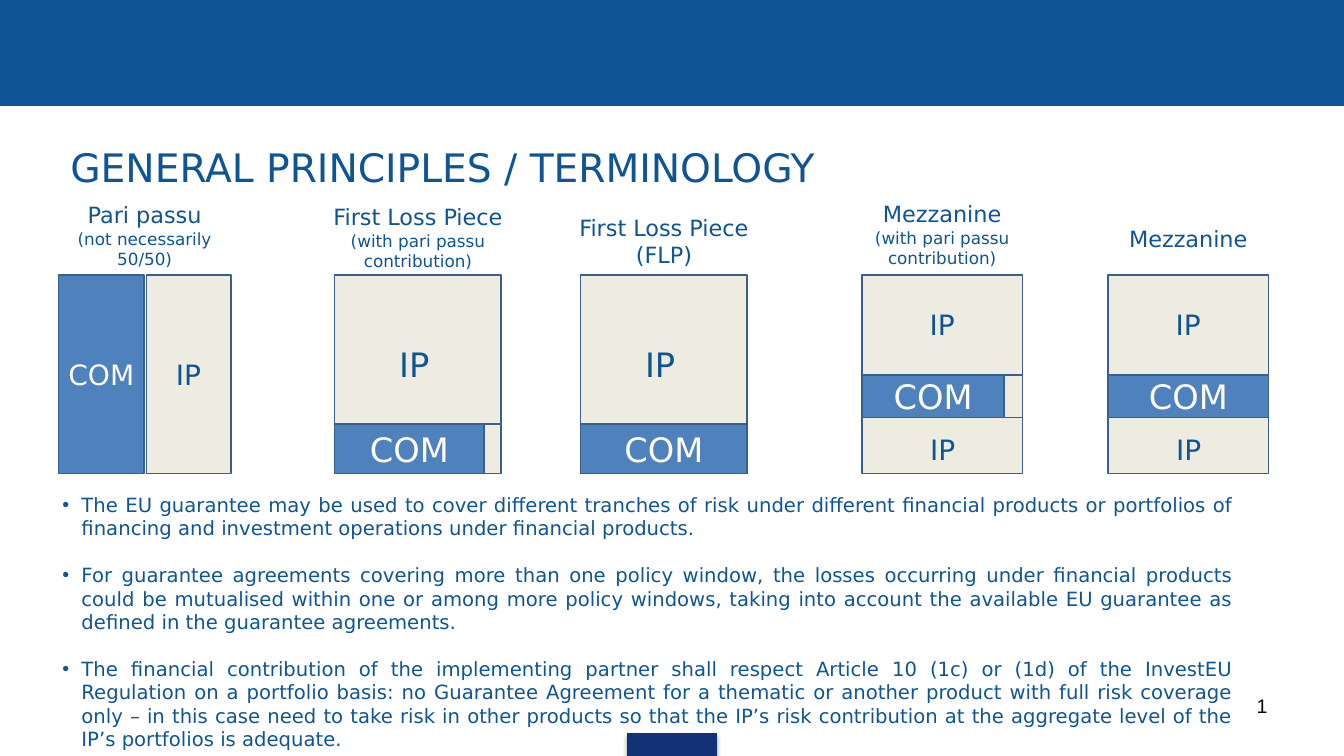
from dataclasses import dataclass

from lxml import etree
from pptx import Presentation
from pptx.dml.color import RGBColor
from pptx.enum.shapes import MSO_SHAPE
from pptx.enum.text import MSO_ANCHOR, PP_ALIGN
from pptx.oxml import parse_xml
from pptx.oxml.ns import nsdecls, qn
from pptx.util import Inches, Pt

BLUE = RGBColor(0x0F, 0x54, 0x94)
NAVY = RGBColor(0x13, 0x31, 0x76)
COM_BLUE = RGBColor(0x4F, 0x81, 0xBD)
IP_BEIGE = RGBColor(0xEE, 0xEC, 0xE1)
OUTLINE = RGBColor(0x3A, 0x5F, 0x8C)
WHITE = RGBColor(0xFF, 0xFF, 0xFF)
BLACK = RGBColor(0, 0, 0)
FONT = "DejaVu Sans"

BULLETS = [
    "The EU guarantee may be used to cover different tranches of risk under different "
    "financial products or portfolios of financing and investment operations under "
    "financial products.",
    "For guarantee agreements covering more than one policy window, the losses occurring "
    "under financial products could be mutualised within one or among more policy windows, "
    "taking into account the available EU guarantee as defined in the guarantee agreements.",
    "The financial contribution of the implementing partner shall respect Article 10 (1c) or "
    "(1d) of the InvestEU Regulation on a portfolio basis: no Guarantee Agreement for a "
    "thematic or another product with full risk coverage only – in this case need to take "
    "risk in other products so that the IP’s risk contribution at the aggregate level of the "
    "IP’s portfolios is adequate.",
]


@dataclass
class Box:
    left: float
    top: float
    width: float
    height: float

    def area(self, left, top, width, height):
        """Box on a grid of 100 columns by 100 rows laid over this one."""
        return Box(self.left + self.width * left / 100, self.top + self.height * top / 100,
                   self.width * width / 100, self.height * height / 100)

    def lengths(self):
        return [Inches(value) for value in (self.left, self.top, self.width, self.height)]


def format_paragraph(paragraph, text, size, color=BLUE, align=PP_ALIGN.LEFT, font=FONT):
    paragraph.text = text
    paragraph.alignment = align
    for run in paragraph.runs:
        run.font.size = Pt(size)
        run.font.name = font
        run.font.color.rgb = color


def add_text(slide, box, lines, align=PP_ALIGN.LEFT, color=BLUE, font=FONT):
    text_frame = slide.shapes.add_textbox(*box.lengths()).text_frame
    text_frame.word_wrap = True
    for index, (text, size) in enumerate(lines):
        paragraph = text_frame.add_paragraph() if index else text_frame.paragraphs[0]
        format_paragraph(paragraph, text, size, color, align, font)
    return text_frame


def add_block(slide, box, fill, line=OUTLINE, line_width=1, text="", size=24, color=WHITE):
    shape = slide.shapes.add_shape(MSO_SHAPE.RECTANGLE, *box.lengths())
    shape.shadow.inherit = False
    shape.fill.solid()
    shape.fill.fore_color.rgb = fill
    shape.line.color.rgb = line
    shape.line.width = Pt(line_width)
    if text:
        shape.text_frame.word_wrap = False
        shape.text_frame.vertical_anchor = MSO_ANCHOR.MIDDLE
        format_paragraph(shape.text_frame.paragraphs[0], text, size, color, PP_ALIGN.CENTER)
    return shape


def draw_frame(slide, page):
    add_block(slide, page.area(0, 0, 100, 14), BLUE, BLUE, 0.75)
    tab = add_block(slide, page.area(46.67, 97.07, 6.67, 2.93), NAVY, NAVY, 0.75)
    effects = tab._element.spPr.find(qn("a:effectLst"))
    effects.append(parse_xml(
        f'<a:outerShdw {nsdecls("a")} blurRad="{Pt(3.1)}" dist="{Pt(1.8)}" dir="5400000" '
        'rotWithShape="0"><a:srgbClr val="000000"><a:alpha val="35000"/></a:srgbClr>'
        '</a:outerShdw>'))
    add_text(slide, page.area(71.72, 91.07, 23.33, 6.93), [("1", 14)],
             PP_ALIGN.RIGHT, BLACK, "Arial")


def draw_bullets(slide, box):
    text_frame = add_text(slide, box, [(text, 14) for text in BULLETS], PP_ALIGN.JUSTIFY)
    for index, paragraph in enumerate(text_frame.paragraphs):
        if index:
            paragraph.space_before = Pt(16.5)
        properties = paragraph._p.get_or_add_pPr()
        properties.set("marL", str(Inches(0.19)))
        properties.set("indent", str(-Inches(0.19)))
        etree.SubElement(properties, qn("a:buFont")).set("typeface", "Arial")
        etree.SubElement(properties, qn("a:buChar")).set("char", "•")


def draw_pari_passu(slide, box):
    add_block(slide, box.area(50.9, 0, 49.1, 100), IP_BEIGE, text="IP", size=20, color=BLUE)
    add_block(slide, box.area(0, 0, 49.7, 100), COM_BLUE, text="COM", size=20)


def draw_first_loss(slide, box, com_share=100):
    add_block(slide, box.area(0, 0, 100, 75), IP_BEIGE)
    add_text(slide, box.area(32.7, 32, 35.2, 21.3), [("IP", 24)])
    if com_share < 100:
        add_block(slide, box.area(com_share, 75, 100 - com_share, 25), IP_BEIGE)
    add_block(slide, box.area(0, 75, com_share, 25), COM_BLUE, text="COM")


def draw_mezzanine(slide, box, com_share=100):
    add_block(slide, box, IP_BEIGE)
    add_text(slide, box.area(27.7, 13.7, 44.6, 18.3), [("IP", 20)], PP_ALIGN.CENTER)
    add_text(slide, box.area(1.9, 76.6, 96.8, 18.3), [("IP", 20)], PP_ALIGN.CENTER)
    if com_share < 100:
        add_block(slide, box.area(com_share, 50.3, 100 - com_share, 21.3), IP_BEIGE)
    add_block(slide, box.area(0, 50.3, com_share, 21.3), COM_BLUE, text="COM")


def draw_diagrams(slide, page):
    contribution = ("(with pari passu contribution)", 12)
    # left, width, label top, label width, label height, label lines, drawing, options
    diagrams = [
        (4.35, 12.83, 26, 12.6, 10.27,
         [("Pari passu", 16), ("(not necessarily 50/50)", 12)], draw_pari_passu, {}),
        (24.91, 12.38, 26.27, 16.5, 10.27,
         [("First Loss Piece", 16), contribution], draw_first_loss, {"com_share": 89.7}),
        (43.21, 12.38, 27.73, 16.5, 8.53,
         [("First Loss Piece (FLP)", 16)], draw_first_loss, {}),
        (64.14, 11.93, 25.87, 16.5, 10.27,
         [("Mezzanine", 16), contribution], draw_mezzanine, {"com_share": 88.5}),
        (82.45, 11.93, 29.07, 16.5, 4.93,
         [("Mezzanine", 16)], draw_mezzanine, {}),
    ]
    for left, width, label_top, label_width, label_height, lines, draw, options in diagrams:
        draw(slide, page.area(left, 36.4, width, 26.27), **options)
        label_left = left + (width - label_width) / 2
        label_box = page.area(label_left, label_top, label_width, label_height)
        add_text(slide, label_box, lines, PP_ALIGN.CENTER)


def main():
    presentation = Presentation()
    page = Box(0, 0, 13.33, 7.5)
    presentation.slide_width = Inches(page.width)
    presentation.slide_height = Inches(page.height)
    slide = presentation.slides.add_slide(presentation.slide_layouts[6])

    # Header band, footer tab and page number
    draw_frame(slide, page)
    # Title
    add_text(slide, page.area(4.5, 18.27, 86.27, 7.6),
             [("GENERAL PRINCIPLES / TERMINOLOGY", 28)])
    # Risk sharing diagrams
    draw_diagrams(slide, page)
    # Explanations
    draw_bullets(slide, page.area(3.9, 64.53, 88.6, 35.47))

    presentation.save("out.pptx")


if __name__ == "__main__":
    main()
